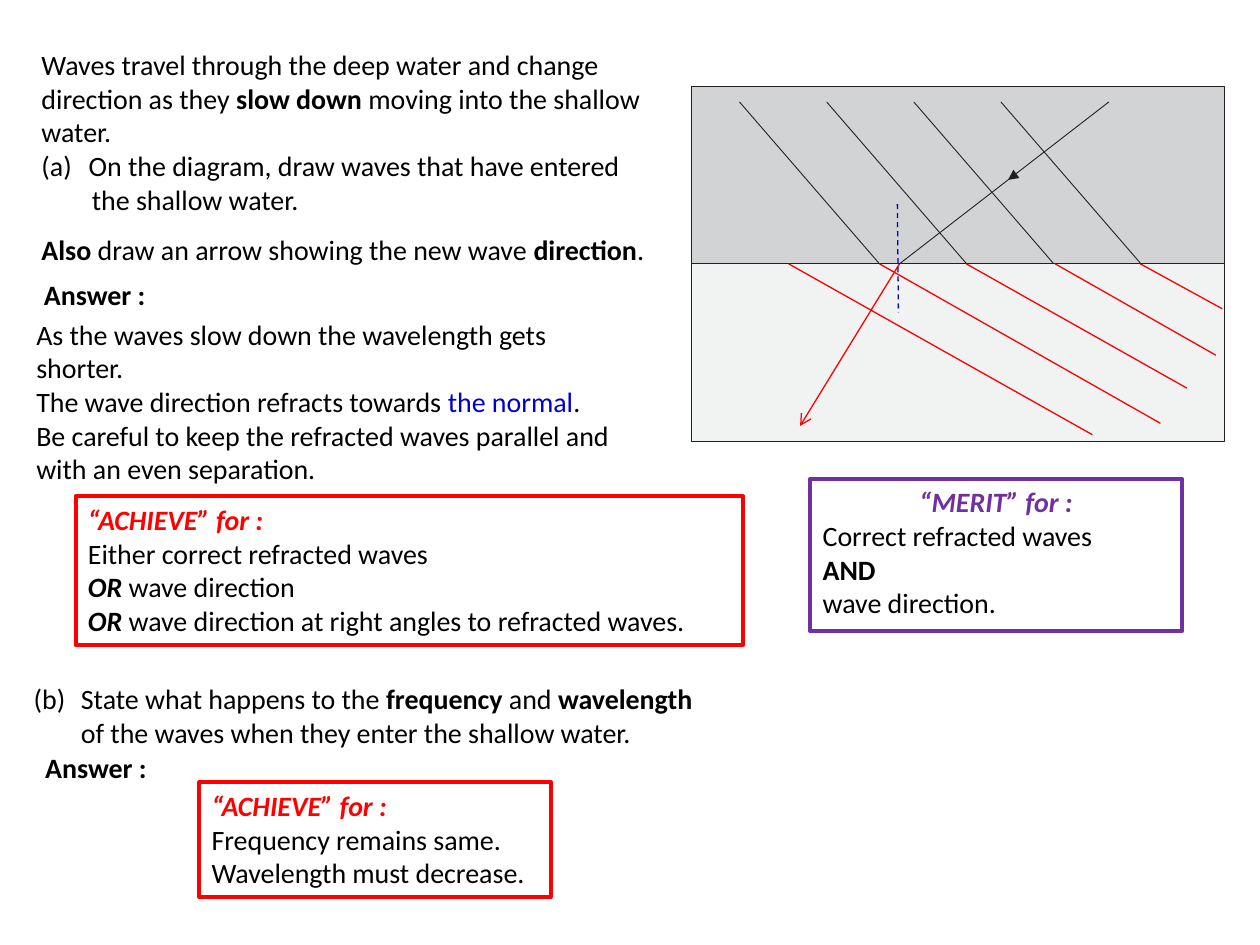
from pptx import Presentation
from pptx.dml.color import RGBColor
from pptx.enum.dml import MSO_LINE
from pptx.enum.shapes import MSO_CONNECTOR, MSO_SHAPE
from pptx.enum.text import MSO_ANCHOR, MSO_AUTO_SIZE, PP_ALIGN
from pptx.oxml.ns import qn
from pptx.util import Pt
from lxml import etree

RECT, STRAIGHT = MSO_SHAPE.RECTANGLE, MSO_CONNECTOR.STRAIGHT
DASH, CENTER, TOP = MSO_LINE.DASH, PP_ALIGN.CENTER, MSO_ANCHOR.TOP
FIT = MSO_AUTO_SIZE.SHAPE_TO_FIT_TEXT
rgb = RGBColor.from_string
BLACK, INK, RED, BLUE, PURPLE = "000000", "231F20", "FF0000", "0000CC", "7030A0"
BOLD = {"bold": True}
BOLD_ITALIC = {"bold": True, "italic": True}

prs = Presentation()
prs.slide_width, prs.slide_height = Pt(720), Pt(540)
s = prs.slides.add_slide(prs.slide_layouts[6])


def write(sp, paragraphs, wrap=True):
    """Fill a shape; a paragraph is a list of (text, format, colour) runs."""
    tf = sp.text_frame
    for name, value in {"word_wrap": wrap, "auto_size": FIT, "vertical_anchor": TOP}.items():
        setattr(tf, name, value)
    for i, runs in enumerate(paragraphs):
        p = tf.paragraphs[0] if i == 0 else tf.add_paragraph()
        p.alignment = PP_ALIGN.LEFT
        for text, fmt, color in runs:
            r = p.add_run()
            r.text = text
            for name, value in {"name": "Calibri", "size": Pt(16), **fmt}.items():
                setattr(r.font, name, value)
            r.font.color.rgb = rgb(color)
    return tf.paragraphs


def draw_line(x1, y1, x2, y2, color, width):
    line = s.shapes.add_connector(STRAIGHT, Pt(x1), Pt(y1), Pt(x2), Pt(y2))
    line.line.color.rgb = rgb(color)
    line.line.width = Pt(width)
    etree.SubElement(line._element.spPr, qn("a:effectLst"))
    return line


# Question (a), answers and question (b)
texts = [
    (16.6, 23.8, 367, 133, True, [
        [("Waves travel through the deep water and change direction as they ", {}, BLACK),
         ("slow down ", BOLD, BLACK), ("moving into the shallow water.", {}, BLACK)],
        [("On the diagram, draw waves that have entered", {}, BLACK)],
        [("the shallow water.", {}, BLACK)],
        [("Also ", BOLD, BLACK), ("draw an arrow showing the new wave ", {}, BLACK),
         ("direction", BOLD, BLACK), (".", {}, BLACK)]]),
    (12.2, 386, 407.5, 46, True, [
        [("State what happens to the ", {}, BLACK), ("frequency ", BOLD, BLACK),
         ("and ", {}, BLACK), ("wavelength ", BOLD, BLACK),
         ("of the waves when they enter the shallow water.", {}, BLACK)]]),
    (18, 154.8, 73.4, 26.6, False, [[("Answer :", BOLD, BLACK)]]),
    (13.7, 177.8, 343.4, 104.4, True, [
        [("As the waves slow down the wavelength gets shorter.", {}, BLACK)],
        [("The wave direction refracts towards ", {}, BLACK),
         ("the normal", {}, BLUE), (".", {}, BLACK)],
        [("Be careful to keep the refracted waves parallel and with an even separation.",
          {}, BLACK)]]),
    (18.7, 425.5, 73.4, 26.6, False, [[("Answer :", BOLD, BLACK)]]),
]
written = [write(s.shapes.add_textbox(Pt(x), Pt(y), Pt(w), Pt(h)), paragraphs, wrap)
           for x, y, w, h, wrap, paragraphs in texts]

# Lettering and indents of the two questions
question_a, question_b = written[:2]
for start, p in enumerate([question_a[1], question_b[0]], 1):
    pPr = p._p.get_or_add_pPr()
    pPr.set("marL", str(Pt(27)))
    pPr.set("indent", str(Pt(-27)))
    etree.SubElement(pPr, qn("a:buAutoNum"), type="alphaLcParenBoth", startAt=str(start))
question_a[2]._p.get_or_add_pPr().set("marL", str(Pt(28.8)))
question_a[3].line_spacing = 1.5

# Deep and shallow water
LEFT, SURFACE, WIDTH, DEPTH = 395.2, 150.8, 304.6, 101.3
for y, color in [(SURFACE - DEPTH, "D1D3D4"), (SURFACE, "F1F2F2")]:
    water = s.shapes.add_shape(RECT, Pt(LEFT), Pt(y), Pt(WIDTH), Pt(DEPTH))
    water.shadow.inherit = False
    water.fill.solid()
    water.fill.fore_color.rgb = rgb(color)
    water.line.color.rgb = rgb(INK)
    water.line.width = Pt(0.5)

# Incoming waves and their direction
for i in range(4):
    x = 422.6 + 49.8 * i
    draw_line(x, 58.3, x + 80, SURFACE, INK, 0.5)
draw_line(514, SURFACE, 633.6, 58.3, INK, 0.5)
builder = s.shapes.build_freeform(Pt(579.1), Pt(97), scale=1.0)
builder.add_line_segments([(Pt(576), Pt(102.8)), (Pt(582.5), Pt(101.7))])
head = builder.convert_to_shape()
head.shadow.inherit = False
head.fill.solid()
head.fill.fore_color.rgb = rgb(INK)
head.line.fill.background()

# Refracted waves
for x1, x2, y2 in [(450.7, 624.2, 248.4), (502.6, 663.1, 241.9), (552.2, 678.2, 221.8),
                   (603, 694.8, 203), (651.6, 698.4, 176.4)]:
    draw_line(x1, SURFACE, x2, y2, RED, 0.75)

# Refracted direction and the normal
direction = draw_line(514, SURFACE, 457.2, 243.4, RED, 0.75)
etree.SubElement(direction.line._get_or_add_ln(), qn("a:tailEnd"), type="arrow")
normal = draw_line(512.8, 116.6, 513.4, 178.6, BLUE, 0.75)
normal.line.dash_style = DASH

# Marking boxes
boxes = [
    (43.2, 283.7, 381.6, 85, RED, "“ACHIEVE” for :", [
        [("Either correct refracted waves", {}, BLACK)],
        [("OR", BOLD_ITALIC, BLACK), (" wave direction", {}, BLACK)],
        [("OR", BOLD_ITALIC, BLACK),
         (" wave direction at right angles to refracted waves.", {}, BLACK)]]),
    (463, 273.6, 212.4, 87.1, PURPLE, "“MERIT” for :", [
        [("Correct refracted waves", {}, BLACK)],
        [("AND", BOLD, BLACK)],
        [("wave direction.", {}, BLACK)]]),
    (113.8, 447.1, 200.9, 65.5, RED, "“ACHIEVE” for :", [
        [("Frequency remains same.", {}, BLACK)],
        [("Wavelength must decrease.", {}, BLACK)]]),
]
for x, y, w, h, color, heading, lines in boxes:
    sp = s.shapes.add_shape(RECT, Pt(x), Pt(y), Pt(w), Pt(h))
    sp.shadow.inherit = False
    sp.fill.solid()
    sp.fill.fore_color.rgb = rgb("FFFFFF")
    sp.line.color.rgb = rgb(color)
    sp.line.width = Pt(2.25)
    paragraphs = write(sp, [[(heading, BOLD_ITALIC, color)]] + lines)
    if color == PURPLE:
        paragraphs[0].alignment = CENTER

prs.save("out.pptx")
